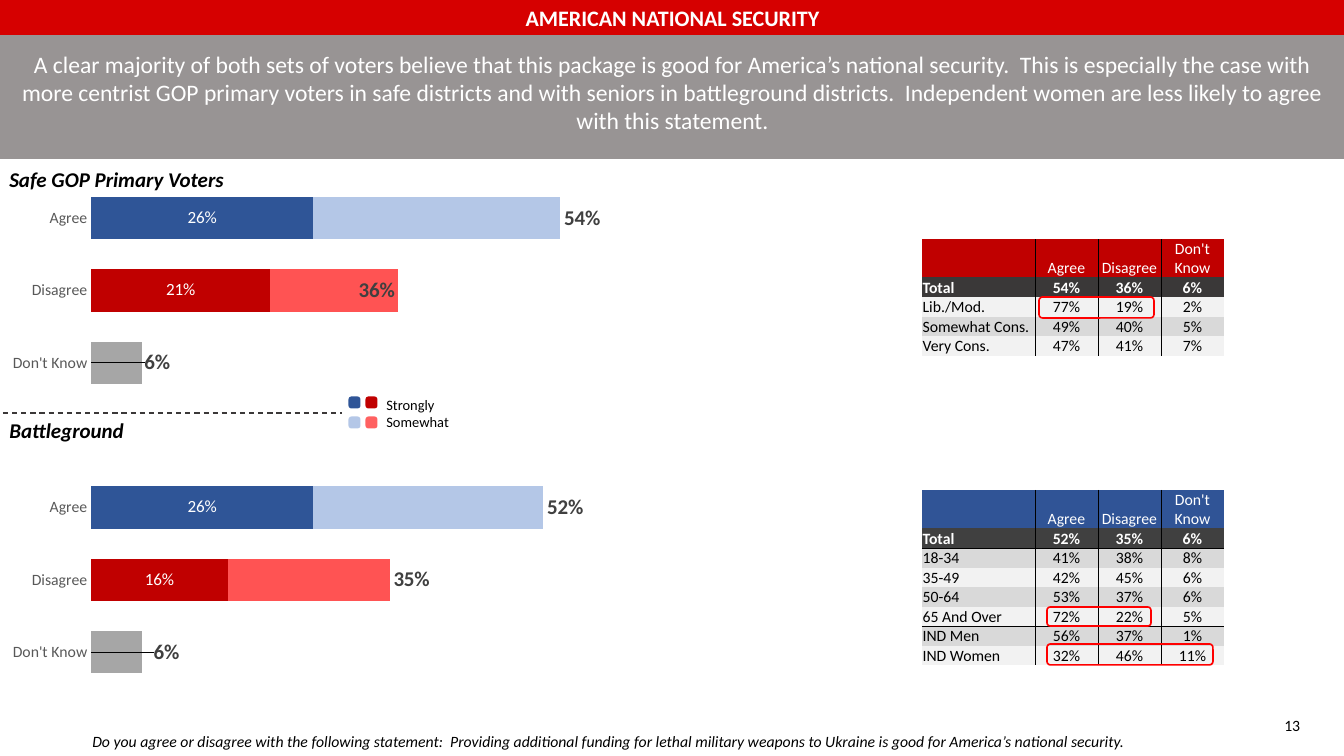
from pptx import Presentation
from pptx.chart.data import CategoryChartData as Data
from pptx.dml.color import RGBColor as Rgb
from pptx.enum.chart import XL_CHART_TYPE as Kind, XL_LABEL_POSITION as Pos, XL_TICK_MARK as Tick
from pptx.enum.dml import MSO_LINE as Dash
from pptx.enum.shapes import MSO_CONNECTOR as Wire, MSO_SHAPE as Form
from pptx.enum.text import MSO_ANCHOR as Anchor, PP_ALIGN as Align
from pptx.oxml import parse_xml
from pptx.oxml.ns import nsdecls, qn
from pptx.util import Pt

PX = 9676
HUES = {
    "white": "FFFFFF", "black": "000000", "gray": "989494", "title": "D60000",
    "blue": "2F5597", "sky": "B4C7E7", "red": "C00000", "rose": "FF5353",
    "pink": "FF6161", "ash": "A6A6A6", "label": "404040", "axis": "595959",
    "dash": "3B3838", "ring": "FF0000", "navy": "305496", "coal": "3A3838",
    "pale": "F2F2F2", "mid": "D9D9D9",
}
NO_GRID = "{2D5ABB26-0587-4C30-8999-92F81FD0307C}"
NO_LEADER = (
    f'<c:extLst {nsdecls("c")}><c:ext uri="{{CE6537A1-D6FC-4f65-9D91-7224C49458BB}}" '
    'xmlns:c15="http://schemas.microsoft.com/office/drawing/2012/chart">'
    '<c15:showLeaderLines val="0"/></c:ext></c:extLst>')


def hue(name):
    return Rgb.from_string(HUES[name])


class Deck:
    """Holds the style and the current slide, and draws each kind of element."""

    def __init__(self, wide, high, face):
        self.prs = Presentation()
        self.prs.slide_width, self.prs.slide_height = wide * PX, high * PX
        self.face = face
        self.slide = self.prs.slides.add_slide(self.prs.slide_layouts[6])
        self.shapes = self.slide.shapes

    def style(self, font, size, color="black", bold=False, italic=False):
        font.name, font.size = self.face, Pt(size)
        font.bold, font.italic = bold, italic
        font.color.rgb = hue(color)

    def box(self, at, fill=None, line=None, width=1, form=Form.RECTANGLE):
        shape = self.shapes.add_shape(form, *(n * PX for n in at))
        shape.shadow.inherit = False
        if fill:
            shape.fill.solid()
            shape.fill.fore_color.rgb = hue(fill)
        else:
            shape.fill.background()
        if line:
            shape.line.color.rgb = hue(line)
            shape.line.width = Pt(width)
        else:
            shape.line.fill.background()

    def text(self, at, lines, size, color="black", align=Align.LEFT, **look):
        frame = self.shapes.add_textbox(*(n * PX for n in at)).text_frame
        frame.word_wrap = True
        frame.text = lines
        for para in frame.paragraphs:
            para.alignment = align
            self.style(para.font, size, color, **look)

    def rule(self, x, y, end):
        wire = self.shapes.add_connector(Wire.STRAIGHT, x * PX, y * PX, end * PX, y * PX)
        wire.line.color.rgb = hue("dash")
        wire.line.width = Pt(1)
        wire.line.dash_style = Dash.DASH
        wire._element.spPr.append(parse_xml(f"<a:effectLst {nsdecls('a')}/>"))

    def table(self, at, cols, rows, fills, ruled=()):
        grid = self.shapes.add_table(len(rows), len(cols), *(n * PX for n in at)).table
        grid._tbl.tblPr.find(qn("a:tableStyleId")).text = NO_GRID
        grid.first_row = grid.horz_banding = False
        for col, wide in zip(grid.columns, cols):
            col.width = wide * PX
        for r, (row, fill) in enumerate(zip(rows, fills)):
            grid.rows[r].height = (19 if r else 38) * PX
            for c, word in enumerate(row):
                cell = grid.cell(r, c)
                edges = {"L": c > 0, "R": c < len(cols) - 1, "T": r - 1 in ruled, "B": r in ruled}
                for side, shown in edges.items():
                    self.edge(cell, side, shown)
                cell.fill.solid()
                cell.fill.fore_color.rgb = hue(fill)
                cell.margin_left = cell.margin_right = cell.margin_top = Pt(0.5)
                cell.margin_bottom = 0
                cell.vertical_anchor = Anchor.BOTTOM
                cell.text = word
                para = cell.text_frame.paragraphs[0]
                para.alignment = Align.CENTER if c else Align.LEFT
                self.style(para.font, 12, "white" if r < 2 else "black", bold=r == 1)

    def edge(self, cell, side, shown):
        paint = "<a:noFill/>"
        if shown:
            paint = f'<a:solidFill><a:srgbClr val="{HUES["black"]}"/></a:solidFill>'
        cell._tc.get_or_add_tcPr().append(parse_xml(
            f'<a:ln{side} {nsdecls("a")} w="6350">{paint}</a:ln{side}>'))

    def chart(self, at, cats, series, plan):
        data = Data(number_format="0%")
        data.categories = cats
        for name, vals, *_ in series:
            data.add_series(name, vals)
        chart = self.shapes.add_chart(Kind.BAR_STACKED, *(n * PX for n in at), data).chart
        chart.has_legend = chart.has_title = False
        self.style(chart.font, 10)
        axis, scale = chart.category_axis, chart.value_axis
        axis.major_tick_mark = axis.minor_tick_mark = Tick.NONE
        axis.format.line.fill.background()
        self.style(axis.tick_labels.font, 12, "axis")
        scale.minimum_scale, scale.maximum_scale = 0, 0.6
        scale.has_major_gridlines = scale.visible = False
        plot = chart.plots[0]
        plot.gap_width, plot.overlap, plot.vary_by_categories = 70, 100, False
        for bars, (_, _, fill, points) in zip(plot.series, series):
            bars.format.fill.solid()
            bars.format.fill.fore_color.rgb = hue(fill)
            for i, tint in points.items():
                area = bars.points[i].format.fill
                if tint:
                    area.solid()
                    area.fore_color.rgb = hue(tint)
                else:
                    area.background()
        area = chart._chartSpace.chart.plotArea
        for old in area.findall(qn("c:layout")):
            area.remove(old)
        area.insert(0, self.layout("xywh", plan, '<c:layoutTarget val="inner"/>'
                                   '<c:xMode val="edge"/><c:yMode val="edge"/>'))
        return plot.series

    def layout(self, keys, vals, head=""):
        body = "".join(f'<c:{k} val="{v}"/>' for k, v in zip(keys, vals))
        return parse_xml(f'<c:layout {nsdecls("c")}><c:manualLayout>{head}{body}'
                         '</c:manualLayout></c:layout>')

    def labels(self, bars, pos, size, color, bold=False, shifts=None):
        tags = bars.data_labels
        tags.show_value = True
        tags.number_format, tags.number_format_is_linked = "0%", False
        tags.position = pos
        self.style(tags.font, size, color, bold)
        for i, shift in (shifts or {}).items():
            tag = bars.points[i].data_label
            self.style(tag.font, size, color, bold)
            tag.position = pos
            tag._dLbl.insert(1, self.layout("xy", (shift, 0)))
        root = tags._element
        for old in root.findall(qn("c:showLeaderLines")):
            root.remove(old)
        root.append(parse_xml(NO_LEADER))


def main():
    deck = Deck(1344, 756, "Calibri")
    deck.box((0, 0, 1344, 159), "gray")
    deck.box((0, 0, 1344, 35), "title")
    deck.text((1275, 711, 53, 28), "13", 12)
    deck.text((1, 0, 1343, 37), "AMERICAN NATIONAL SECURITY", 16.8, "white", Align.CENTER, bold=True)
    deck.text((83, 727, 1097, 28), "Do you agree or disagree with the following statement:  Providing "
              "additional funding for lethal military weapons to Ukraine is good for America’s "
              "national security.", 12, italic=True)
    deck.rule(3, 413, 342)

    blues = {2: "blue", 6: "blue"}
    skies = {2: "sky", 6: "sky"}
    clear = dict.fromkeys((1, 2, 5, 6))
    answers = ["Don't Know", "Disagree", "Agree"]
    firm, _, total = deck.chart((0, 172, 620, 527), answers + [""] + answers, [
        ("Series 1", (None, 0.16, 0.26, None, None, 0.21, 0.26), "red", blues),
        ("Series 2", (None, 0.19, 0.27, None, None, 0.15, 0.29), "rose", skies),
        ("Series 3", (0.06, 0.35, 0.52, None, 0.06, 0.36, 0.54), "ash", clear),
    ], (0.147, 0.019, 0.826, 0.961))
    deck.labels(firm, Pos.CENTER, 13, "white")
    deck.labels(total, Pos.INSIDE_BASE, 16, "label", True, {0: 0.095, 4: 0.08, 5: -0.07})

    deck.text((377, 391, 101, 44), "Strongly\nSomewhat", 11)
    for y, pair in ((398, ("blue", "red")), (418, ("sky", "pink"))):
        for x, fill in zip((350, 367), pair):
            deck.box((x, y, 9, 9), fill, fill, 2.25, Form.ROUNDED_RECTANGLE)

    head = ["", "Agree", "Disagree", "Don't Know"]
    cols = (113, 63, 63, 63)
    deck.table((922, 239, 302, 114), cols, [
        head,
        ["Total", "54%", "36%", "6%"],
        ["Lib./Mod.", "77%", "19%", "2%"],
        ["Somewhat Cons.", "49%", "40%", "5%"],
        ["Very Cons.", "47%", "41%", "7%"],
    ], ["red", "coal", "pale", "mid", "pale"])
    deck.table((922, 490, 302, 171), cols, [
        head,
        ["Total", "52%", "35%", "6%"],
        ["18-34", "41%", "38%", "8%"],
        ["35-49", "42%", "45%", "6%"],
        ["50-64", "53%", "37%", "6%"],
        ["65 And Over", "72%", "22%", "5%"],
        ["IND Men", "56%", "37%", "1%"],
        ["IND Women", "32%", "46%", "11%"],
    ], ["navy", "label"] + ["mid", "pale"] * 3, ruled=(1, 5))

    deck.text((1, 45, 1343, 95), "A clear majority of both sets of voters believe that this package is "
              "good for America’s national security.  This is especially the case with more centrist "
              "GOP primary voters in safe districts and with seniors in battleground districts.  "
              "Independent women are less likely to agree with this statement.",
              18, "white", Align.CENTER)
    for ring in ((1047, 607, 104, 19), (1047, 644, 166, 21), (1039, 297, 115, 21)):
        deck.box(ring, None, "ring", 1.25, Form.ROUNDED_RECTANGLE)
    for y, name in ((162, "Safe GOP Primary Voters"), (413, "Battleground")):
        deck.text((0, y, 265, 35), name, 16, bold=True, italic=True)
    deck.prs.save("out.pptx")


if __name__ == "__main__":
    main()
